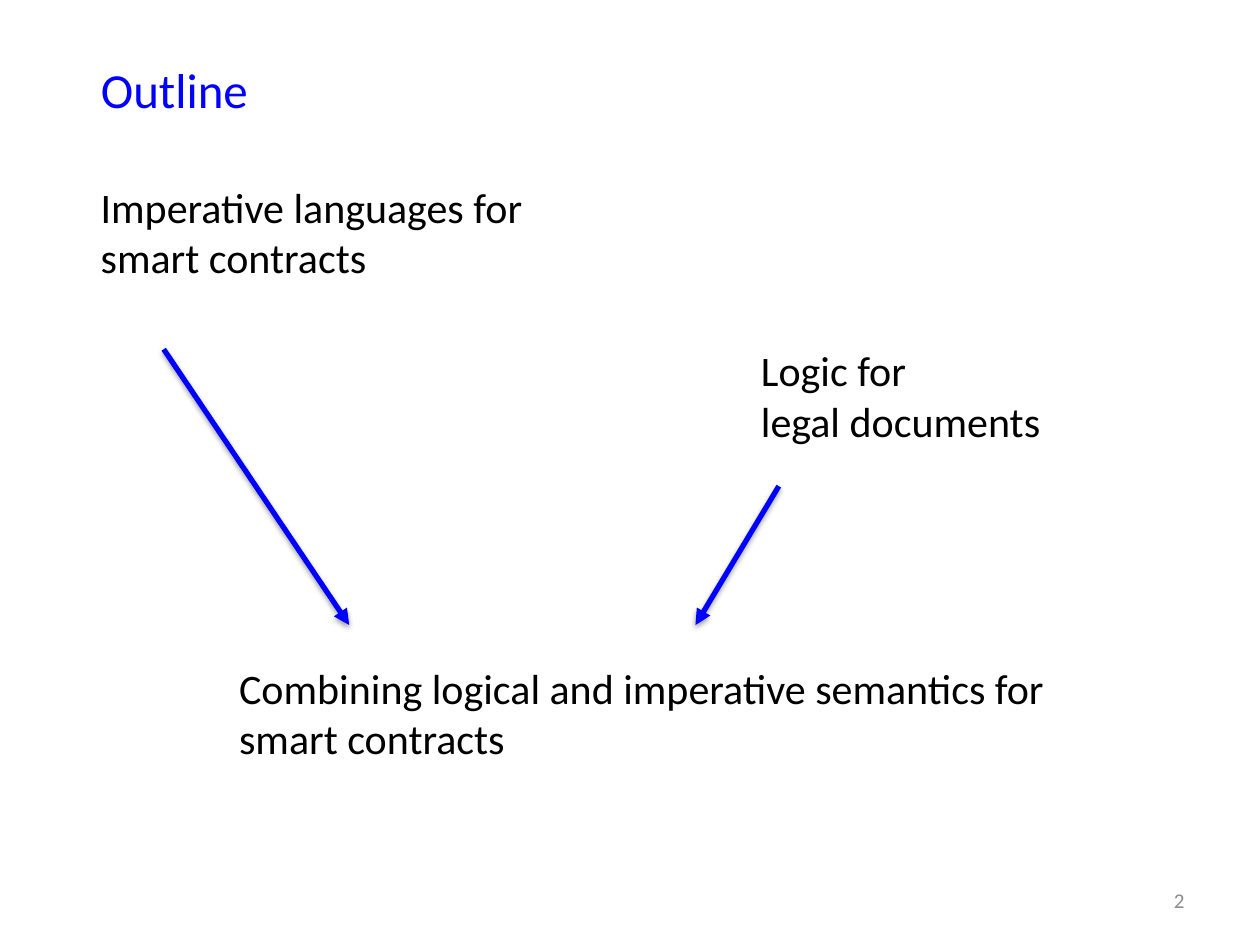
from lxml import etree
from pptx import Presentation
from pptx import util as u
from pptx.dml.color import RGBColor
from pptx.enum import shapes, text
from pptx.oxml import ns

COLORS = {"accent": "0000FF", "body": "000000", "number": "8C8C8C", "shadow": "000000"}


class SlideBuilder:
    """Holds the style and the current slide."""

    font = "Calibri"
    body_size = 24
    line_width = 3

    def __init__(self, presentation):
        self.slide = presentation.slides.add_slide(presentation.slide_layouts[5])

    def format_paragraph(self, paragraph, size, color, align=text.PP_ALIGN.LEFT):
        paragraph.alignment = align
        paragraph.font.name = self.font
        paragraph.font.size = u.Pt(size)
        paragraph.font.color.rgb = RGBColor.from_string(COLORS[color])

    def title(self, wording, left, top, width, height):
        shape = self.slide.shapes.title
        shape.left, shape.top = u.Cm(left), u.Cm(top)
        shape.width, shape.height = u.Cm(width), u.Cm(height)
        frame = shape.text_frame
        frame.text = wording
        frame.auto_size = text.MSO_AUTO_SIZE.SHAPE_TO_FIT_TEXT
        frame.vertical_anchor = text.MSO_ANCHOR.TOP
        self.format_paragraph(frame.paragraphs[0], 28, "accent")

    def topic(self, lines, left, top, width, height, level=0):
        box = self.slide.shapes.add_textbox(u.Cm(left), u.Cm(top), u.Cm(width), u.Cm(height))
        frame = box.text_frame
        frame.word_wrap = False
        frame.auto_size = text.MSO_AUTO_SIZE.SHAPE_TO_FIT_TEXT
        frame.text = "\n".join(lines)
        for paragraph in frame.paragraphs:
            paragraph.level = level
            self.format_paragraph(paragraph, self.body_size, "body")

    def page_number(self, number, left, top, width, height):
        box = self.slide.shapes.add_textbox(u.Cm(left), u.Cm(top), u.Cm(width), u.Cm(height))
        frame = box.text_frame
        frame.word_wrap = True
        frame.vertical_anchor = text.MSO_ANCHOR.MIDDLE
        frame.text = str(number)
        self.format_paragraph(frame.paragraphs[0], 12, "number", text.PP_ALIGN.RIGHT)

    def arrow(self, start, end):
        ends = [u.Cm(length) for length in (*start, *end)]
        connector = self.slide.shapes.add_connector(shapes.MSO_CONNECTOR.STRAIGHT, *ends)
        connector.line.width = u.Pt(self.line_width)
        connector.line.color.rgb = RGBColor.from_string(COLORS["accent"])
        properties = connector.element.spPr
        # Arrowhead
        line = properties.find(ns.qn("a:ln"))
        etree.SubElement(line, ns.qn("a:tailEnd"), type="triangle")
        # Soft shadow straight below
        effects = etree.SubElement(properties, ns.qn("a:effectLst"))
        shadow = etree.SubElement(effects, ns.qn("a:outerShdw"), blurRad="40000",
                                  dist="20000", dir="5400000", rotWithShape="0")
        color = etree.SubElement(shadow, ns.qn("a:srgbClr"), val=COLORS["shadow"])
        etree.SubElement(color, ns.qn("a:alpha"), val="38000")


def main():
    presentation = Presentation()
    presentation.slide_width, presentation.slide_height = u.Cm(25.4), u.Cm(19.05)
    builder = SlideBuilder(presentation)

    # Title and page number
    builder.title("Outline", 1.78, 1.07, 22.6, 1.45)
    builder.page_number(2, 18.2, 17.65, 5.93, 1.01)

    # Two starting topics and the one they lead to
    builder.topic(["Imperative languages for", "smart contracts"], 1.78, 3.53, 9.3, 2.31)
    builder.topic(["Logic for", "legal documents"], 15.09, 6.83, 6.22, 2.31)
    builder.topic(["Combining logical and imperative semantics for", "smart contracts"],
                  3.3, 13.23, 18.19, 3.07, level=1)

    # Arrows to the combined topic
    arrow_end = 12.6
    builder.arrow((3.3, 7.04), (7.04, arrow_end))
    builder.arrow((15.7, 9.8), (14.02, arrow_end))

    presentation.save("out.pptx")


if __name__ == "__main__":
    main()
